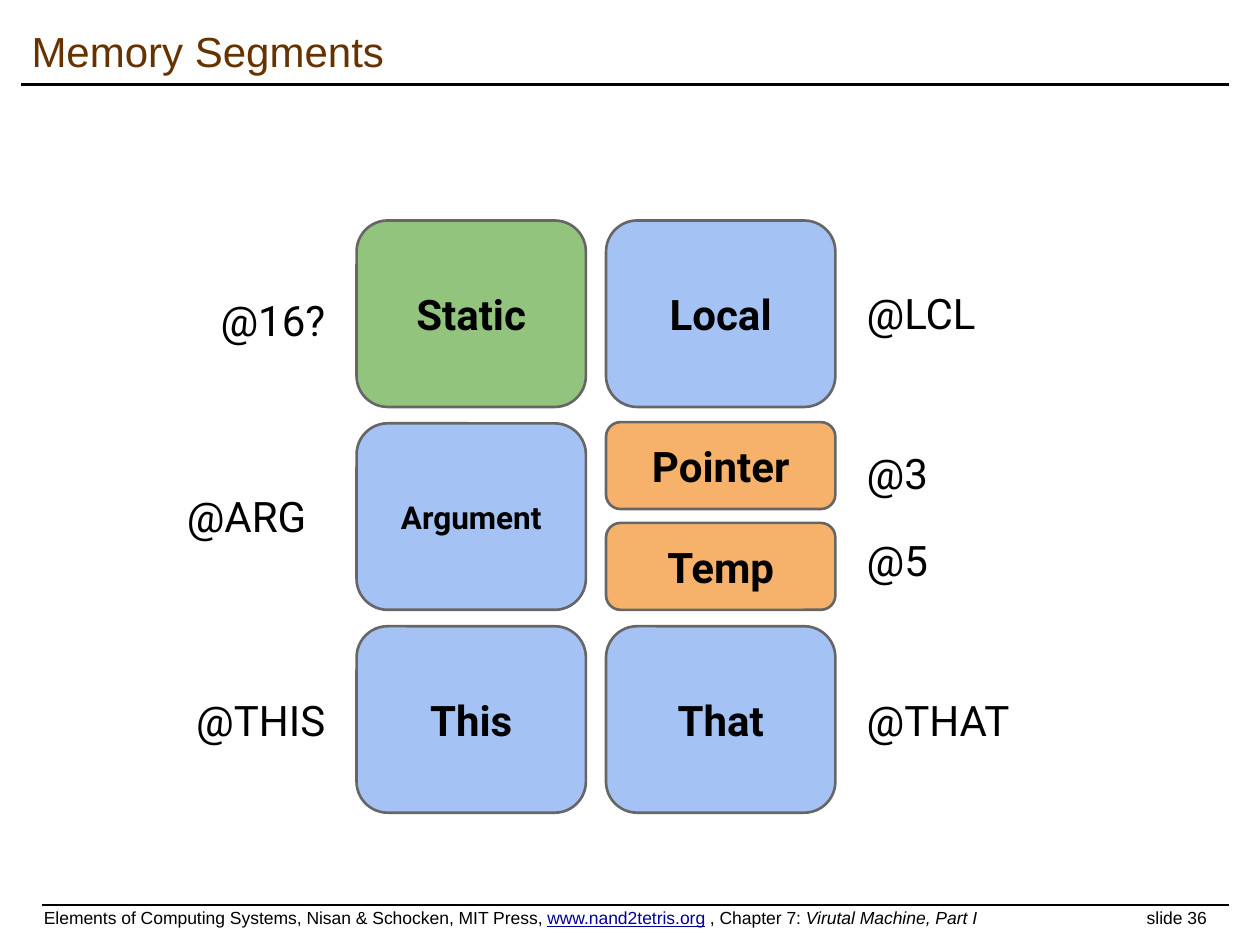
from dataclasses import dataclass

from lxml import etree
from pptx import Presentation
from pptx.dml.color import RGBColor
from pptx.enum import shapes, text
from pptx.oxml import ns
from pptx.util import Inches, Pt

BLACK, BROWN, NAVY, GRAY = "000000", "663300", "000099", "666666"
GREEN, BLUE, ORANGE = "93C47D", "A4C2F4", "F6B26B"
LEFT_COLUMN, RIGHT_COLUMN = 2.83, 4.81
TOP_ROW, MIDDLE_ROW, BOTTOM_ROW = 1.75, 3.36, 4.97
SEGMENT_WIDTH, LABEL_WIDTH = 1.82, 2.15


@dataclass
class Segment:
    name: str
    left: float
    top: float
    fill: str
    height: float = 1.48
    size: int = 24


@dataclass
class Label:
    """Base address written beside a memory segment."""
    name: str
    left: float
    top: float
    height: float = 1.15
    align: text.PP_ALIGN = text.PP_ALIGN.LEFT


SEGMENTS = [
    Segment("Static", LEFT_COLUMN, TOP_ROW, GREEN),
    Segment("Argument", LEFT_COLUMN, MIDDLE_ROW, BLUE, size=18),
    Segment("This", LEFT_COLUMN, BOTTOM_ROW, BLUE),
    Segment("Local", RIGHT_COLUMN, TOP_ROW, BLUE),
    Segment("Pointer", RIGHT_COLUMN, 3.35, ORANGE, height=0.69),
    Segment("Temp", RIGHT_COLUMN, 4.15, ORANGE, height=0.69),
    Segment("That", RIGHT_COLUMN, BOTTOM_ROW, BLUE),
]
LABELS = [
    Label("@16?", 0.53, 1.96, align=text.PP_ALIGN.RIGHT),
    Label("@ARG", 0.38, 3.52, align=text.PP_ALIGN.RIGHT),
    Label("@THIS", 0.53, 5.14, align=text.PP_ALIGN.RIGHT),
    Label("@LCL", 6.78, 1.91),
    Label("@3", 6.78, 3.35, height=0.8),
    Label("@5", 6.78, 4.04, height=0.8),
    Label("@THAT", 6.78, 5.14),
]


def color(value: str) -> RGBColor:
    return RGBColor.from_string(value)


def add_run(paragraph, wording: str, size: float, font: str = "Roboto", tint: str = BLACK,
            bold: bool = False, italic: bool = False, underline: bool = False) -> None:
    run = paragraph.add_run()
    run.text = wording
    run.font.name = font
    run.font.size = Pt(size)
    run.font.bold = bold
    run.font.italic = italic
    run.font.underline = underline
    run.font.color.rgb = color(tint)


def prepare_frame(shape, anchor=text.MSO_ANCHOR.MIDDLE, margin: float = 0.1):
    """Set wrapping, anchor and margins; return the first paragraph."""
    frame = shape.text_frame
    frame.word_wrap = True
    frame.auto_size = text.MSO_AUTO_SIZE.NONE
    frame.vertical_anchor = anchor
    frame.margin_left = frame.margin_right = Inches(0.1)
    frame.margin_top = frame.margin_bottom = Inches(margin)
    return frame.paragraphs[0]


def add_rule(slide, left: float, right: float, top: float, width: float) -> None:
    rule = slide.shapes.add_connector(shapes.MSO_CONNECTOR.STRAIGHT, Inches(left), Inches(top),
                                      Inches(right), Inches(top))
    rule.line.color.rgb = color(BLACK)
    rule.line.width = Pt(width)
    etree.SubElement(rule._element.spPr, ns.qn("a:effectLst"))


def add_segment(slide, segment: Segment) -> None:
    shape = slide.shapes.add_shape(
        shapes.MSO_SHAPE.ROUNDED_RECTANGLE, Inches(segment.left), Inches(segment.top),
        Inches(SEGMENT_WIDTH), Inches(segment.height))
    shape.shadow.inherit = False
    shape.fill.solid()
    shape.fill.fore_color.rgb = color(segment.fill)
    shape.line.color.rgb = color(GRAY)
    shape.line.width = Pt(1.5)
    paragraph = prepare_frame(shape)
    paragraph.alignment = text.PP_ALIGN.CENTER
    add_run(paragraph, segment.name, segment.size, bold=True)


def add_label(slide, label: Label) -> None:
    box = slide.shapes.add_textbox(Inches(label.left), Inches(label.top),
                                   Inches(LABEL_WIDTH), Inches(label.height))
    paragraph = prepare_frame(box)
    paragraph.alignment = label.align
    add_run(paragraph, label.name, 24)


def add_title(slide) -> None:
    title = slide.shapes.title
    title.left, title.top = Inches(0.15), Inches(0.17)
    title.width, title.height = Inches(9), Inches(0.53)
    paragraph = prepare_frame(title, text.MSO_ANCHOR.BOTTOM)
    paragraph.alignment = text.PP_ALIGN.LEFT
    add_run(paragraph, "Memory Segments", 24, "Arial", BROWN)


def add_footer(slide) -> None:
    box = slide.shapes.add_textbox(Inches(0.25), Inches(7.15), Inches(9.5), Inches(0.27))
    paragraph = prepare_frame(box, margin=0.05)
    tabs = etree.SubElement(paragraph._p.get_or_add_pPr(), ns.qn("a:tabLst"))
    etree.SubElement(tabs, ns.qn("a:tab"), pos=str(Inches(9.23)), algn="r")
    add_run(paragraph, "Elements of Computing Systems, Nisan & Schocken, MIT Press, ", 10, "Arial")
    add_run(paragraph, "www.nand2tetris.org", 10, "Arial", NAVY, underline=True)
    add_run(paragraph, " , Chapter 7: ", 10, "Arial")
    add_run(paragraph, "Virutal Machine, Part I", 10, "Arial", italic=True)
    add_run(paragraph, "\tslide 36", 10, "Arial")


def main() -> None:
    presentation = Presentation()
    presentation.slide_width, presentation.slide_height = Inches(10), Inches(7.5)
    slide = presentation.slides.add_slide(presentation.slide_layouts.get_by_name("Title Only"))
    add_rule(slide, 0.17, 9.75, 0.67, 2)
    add_rule(slide, 0.33, 9.75, 7.18, 1)
    add_footer(slide)
    add_title(slide)
    for segment in SEGMENTS:
        add_segment(slide, segment)
    for label in LABELS:
        add_label(slide, label)
    presentation.save("out.pptx")


if __name__ == "__main__":
    main()
